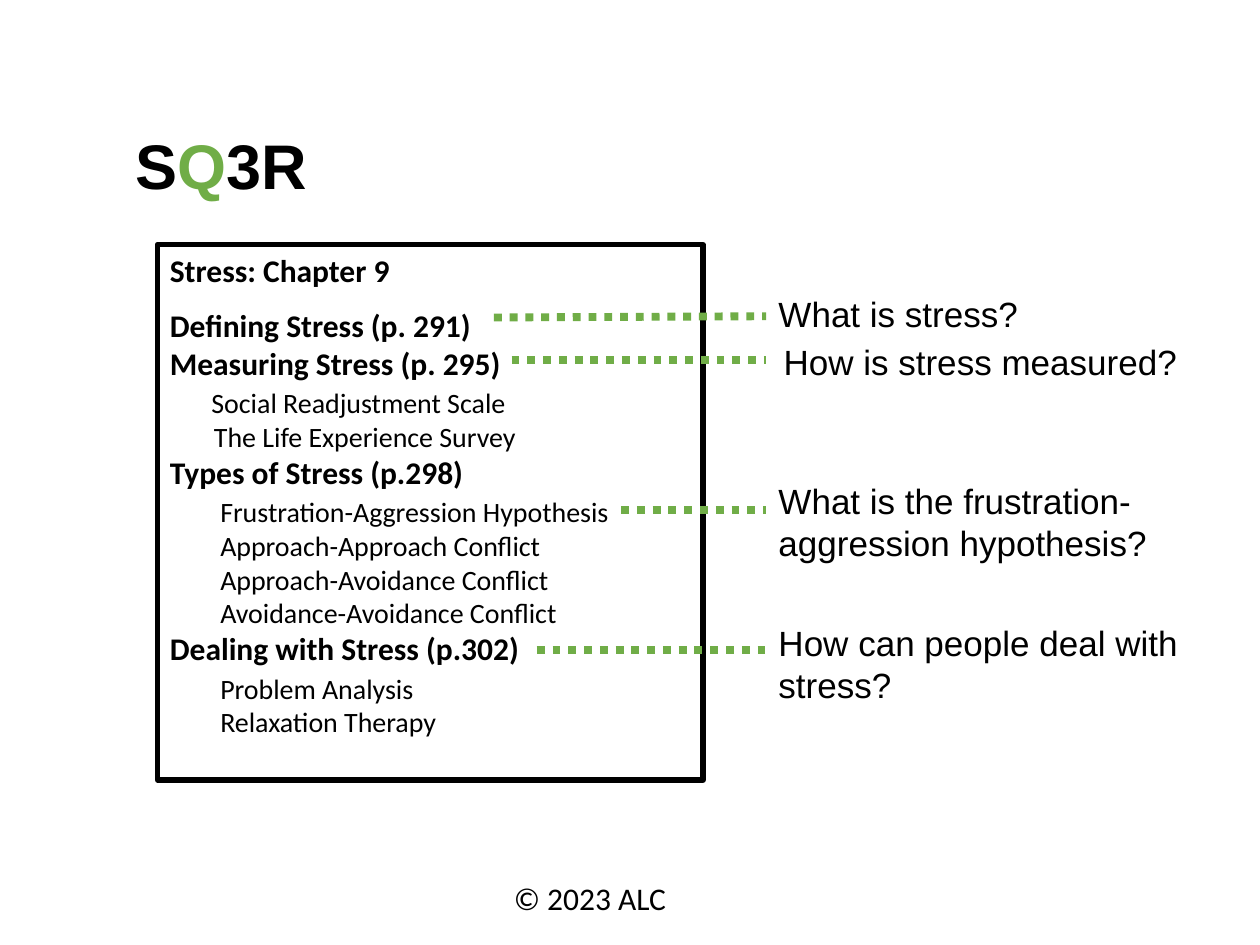
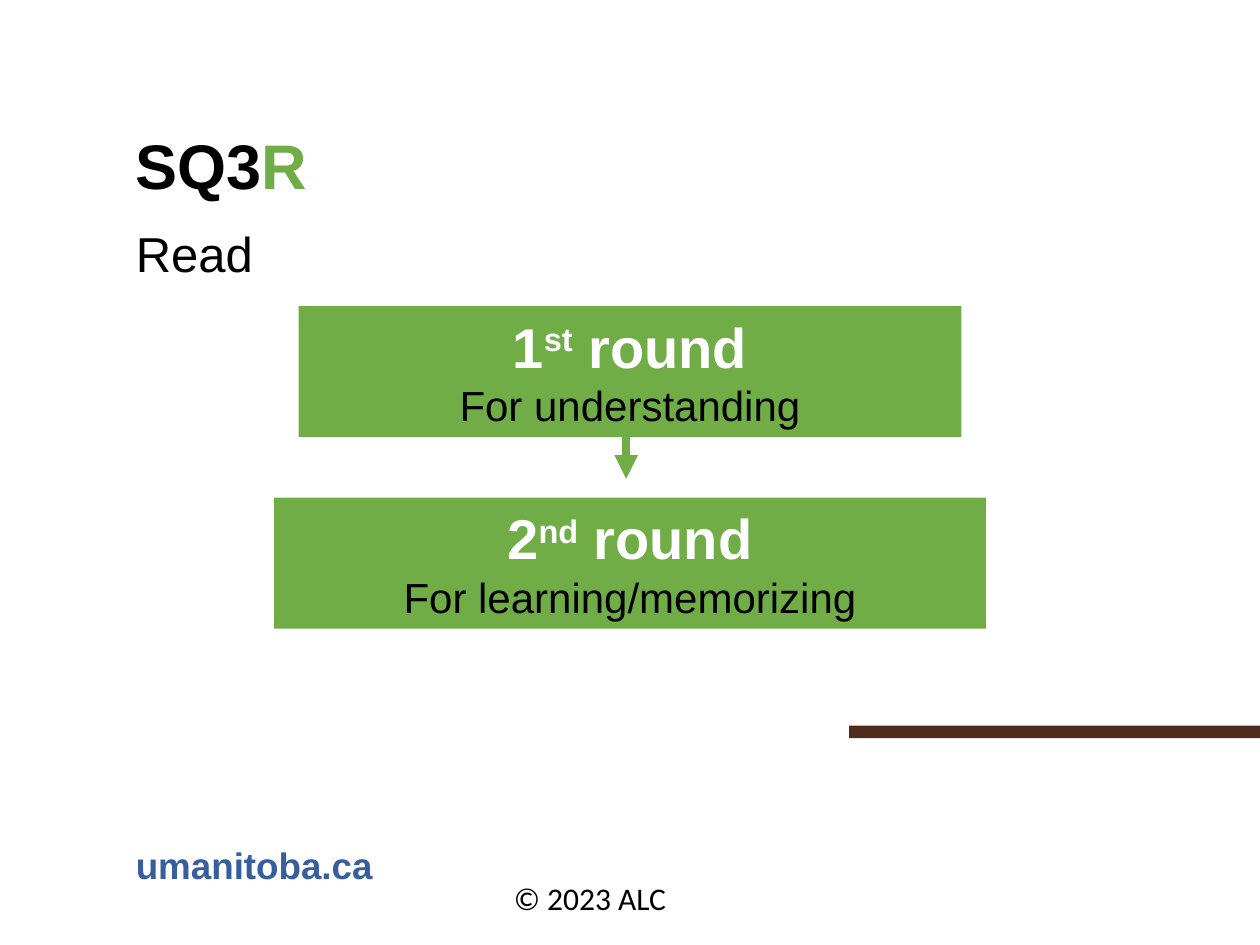
from pptx import Presentation
from pptx.dml.color import RGBColor
from pptx.enum.dml import MSO_LINE_DASH_STYLE as Dash
from pptx.enum.shapes import MSO_CONNECTOR as Connector, MSO_SHAPE as Shape
from pptx.enum.text import MSO_ANCHOR as Anchor, PP_ALIGN as Align
from pptx.oxml.ns import qn
from pptx.util import Inches, Pt
from lxml.etree import SubElement

BLACK = RGBColor(0x00, 0x00, 0x00)
WHITE = RGBColor(0xFF, 0xFF, 0xFF)
GREEN = RGBColor(0x70, 0xAD, 0x47)
BROWN = RGBColor(0x4F, 0x2C, 0x1D)
BLUE = RGBColor(0x38, 0x5E, 0x9D)

MARGIN = 0.98
CONTENT_WIDTH = 8.01

OUTLINE = [
    ("Defining Stress (p. 291)", []),
    ("Measuring Stress (p. 295)", [("Social Readjustment Scale", 0.33),
                                   ("The Life Experience Survey", 0.35)]),
    ("Types of Stress (p.298)", [("Frustration-Aggression Hypothesis", 0.4),
                                 ("Approach-Approach Conflict", 0.4),
                                 ("Approach-Avoidance Conflict", 0.4),
                                 ("Avoidance-Avoidance Conflict", 0.4)]),
    ("Dealing with Stress (p.302)", [("Problem Analysis", 0.4),
                                     ("Relaxation Therapy", 0.4)]),
]

QUESTIONS = [
    ("What is stress?", 6.08, 2.27, 0.44, (3.92, 2.52), (6.08, 2.51)),
    ("How is stress measured?", 6.12, 2.65, 0.44, (4.06, 2.86), (6.08, 2.86)),
    ("What is the frustration-aggression hypothesis?", 6.08, 3.76, 0.77,
     (4.93, 4.05), (6.08, 4.05)),
    ("How can people deal with stress?", 6.08, 4.88, 0.77,
     (4.26, 5.16), (6.08, 5.16)),
]

ROUNDS = [
    ("1", "st", "For understanding", 2.43, 5.26),
    ("2", "nd", "For learning/memorizing", 3.95, 5.65),
]


class Deck:
    def __init__(self):
        self.prs = Presentation()
        self.prs.slide_width = Inches(10)
        self.prs.slide_height = Inches(7.5)
        self.slide = None

    def new_slide(self, title_parts):
        self.slide = self.prs.slides.add_slide(self.prs.slide_layouts[6])
        title = self.text_box(MARGIN, 1.02, CONTENT_WIDTH, 0.53)
        line = title.paragraphs[0]
        line.line_spacing = 0.9
        for text, color in title_parts:
            self.run(line, text, 36, color, bold=True)

    def run(self, paragraph, text, size, color=BLACK, bold=False, font="Arial", raised=False):
        run = paragraph.add_run()
        run.text = text
        run.font.name = font
        run.font.size = Pt(size)
        run.font.bold = bold
        run.font.color.rgb = color
        if raised:
            run.font._element.set("baseline", "30000")

    def text_box(self, left, top, width, height):
        box = self.slide.shapes.add_textbox(
            Inches(left), Inches(top), Inches(width), Inches(height))
        box.text_frame.word_wrap = True
        return box.text_frame

    def label(self, text, left, top, width, height, size, **style):
        line = self.text_box(left, top, width, height).paragraphs[0]
        self.run(line, text, size, **style)
        return line

    def rectangle(self, left, top, width, height, fill, border=None):
        box = self.slide.shapes.add_shape(
            Shape.RECTANGLE, Inches(left), Inches(top), Inches(width), Inches(height))
        box.shadow.inherit = False
        box.fill.solid()
        box.fill.fore_color.rgb = fill
        if border is None:
            box.line.fill.background()
        else:
            box.line.color.rgb = border
            box.line.width = Pt(3)
        box.text_frame.word_wrap = True
        box.text_frame.vertical_anchor = Anchor.TOP
        return box.text_frame

    def paragraph(self, frame, first=False, align=Align.LEFT):
        paragraph = frame.paragraphs[0] if first else frame.add_paragraph()
        paragraph.alignment = align
        return paragraph

    def connector(self, start, end, dotted=False, arrow=False):
        link = self.slide.shapes.add_connector(
            Connector.STRAIGHT, *(Inches(value) for value in (*start, *end)))
        link.line.color.rgb = GREEN
        link.line.width = Pt(4.5)
        if dotted:
            link.line.dash_style = Dash.ROUND_DOT
        properties = link._element.spPr
        if arrow:
            SubElement(properties.find(qn("a:ln")), qn("a:tailEnd"), type="triangle")
        SubElement(properties, qn("a:effectLst"))

    def copyright(self):
        self.label("© 2023 ALC", 3.98, 6.93, 1.52, 0.4, 18, font="Calibri")


def build_question_slide(deck):
    deck.new_slide([("S", BLACK), ("Q", GREEN), ("3R", BLACK)])
    chapter = deck.rectangle(1.25, 1.94, 4.33, 4.25, WHITE, BLACK)
    heading = deck.paragraph(chapter, first=True)
    heading.space_after = Pt(10)
    deck.run(heading, "Stress: Chapter 9", 18, bold=True, font="Calibri")
    for section, topics in OUTLINE:
        deck.run(deck.paragraph(chapter), section, 18, bold=True, font="Calibri")
        for index, (topic, indent) in enumerate(topics):
            line = deck.paragraph(chapter)
            line._p.get_or_add_pPr().set("marL", str(Inches(indent)))
            if index == 0:
                line.space_before = Pt(2.4)
            deck.run(line, topic, 16, font="Calibri")
    for question, left, top, height, start, end in QUESTIONS:
        deck.label(question, left, top, 3.75, height, 20)
        deck.connector(start, end, dotted=True)
    deck.copyright()


def build_read_slide(deck):
    deck.new_slide([("SQ3", BLACK), ("R", GREEN)])
    deck.label("umanitoba.ca", MARGIN, 6.64, 2.66, 0.45, 21, color=BLUE, bold=True)
    deck.rectangle(6.74, 5.76, 3.26, 0.1, BROWN)
    deck.label("Read", MARGIN, 1.78, CONTENT_WIDTH, 0.43, 28).line_spacing = 0.9
    for number, suffix, purpose, top, width in ROUNDS:
        step = deck.rectangle((10 - width) / 2, top, width, 1.04, GREEN)
        name = deck.paragraph(step, first=True, align=Align.CENTER)
        deck.run(name, number, 32, WHITE, bold=True)
        deck.run(name, suffix, 32, WHITE, bold=True, raised=True)
        deck.run(name, " round", 32, WHITE, bold=True)
        deck.run(deck.paragraph(step, align=Align.CENTER), purpose, 24)
    deck.connector((4.97, 3.47), (4.97, 3.8), arrow=True)
    deck.copyright()


def main():
    deck = Deck()
    build_question_slide(deck)
    build_read_slide(deck)
    deck.prs.save("out.pptx")


if __name__ == "__main__":
    main()
